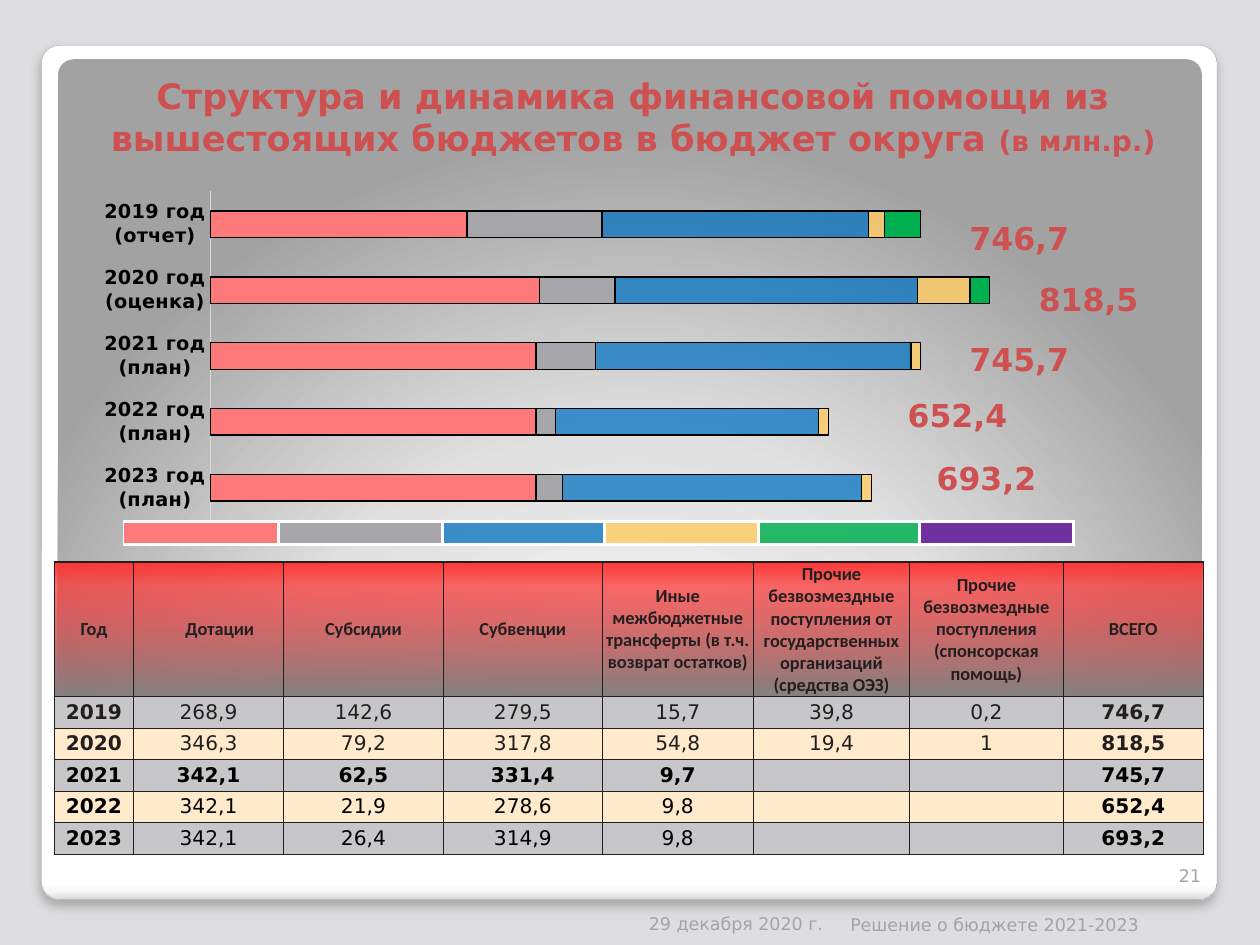
import dataclasses

import pptx
import pptx.chart.data
import pptx.dml.color
import pptx.enum.chart
import pptx.enum.shapes
import pptx.enum.text
import pptx.oxml
import pptx.oxml.ns
import pptx.util

Inches = pptx.util.Inches
Pt = pptx.util.Pt
qn = pptx.oxml.ns.qn
RGB = pptx.dml.color.RGBColor.from_string
ALIGN = pptx.enum.text.PP_ALIGN
ANCHOR = pptx.enum.text.MSO_ANCHOR
NS = pptx.oxml.ns.nsdecls("a")


@dataclasses.dataclass(frozen=True)
class Theme:
    font: str = "DejaVu Sans"
    head_font: str = "Calibri"
    page: str = "DEDEE0"
    accent: str = "CE5050"
    muted: str = "A4A4A6"
    ink: str = "231F20"
    black: str = "000000"
    white: str = "FFFFFF"
    axis: str = "D9D9D9"
    edge: str = "A4A4A4"
    bands: tuple = ("C7C7CA", "FFEACC")
    series: tuple = (("FE7979", 100), ("A5A5AA", 100), ("0070C0", 73),
                     ("FFCC66", 82), ("00B050", 100), ("7030A0", 100))
    swatch_alpha: tuple = (100, 100, 74, 83, 84, 100)
    card: tuple = ((0, "FFFFFF"), (98, "FFFFFF"), (99, "F7F7F7"), (100, "DADADA"))
    glow: tuple = ((0, "FFFFFF"), (55, "E1E1E1"), (100, "A2A2A2"))
    header: tuple = ((0, "828282"), (82, "FF3434", 72), (100, "FE3737"))
    title_pt: float = 20
    unit_pt: float = 16
    total_pt: float = 18
    axis_pt: float = 11
    small_pt: float = 10
    head_pt: float = 10.5
    body_pt: float = 11.5


T = Theme()
RADIAL = ('<a:path path="circle"><a:fillToRect l="50000" t="175000" '
          'r="50000" b="-75000"/></a:path>')


def clr(rgb, alpha=100):
    return f'<a:srgbClr val="{rgb}"><a:alpha val="{alpha * 1000}"/></a:srgbClr>'


def solid(rgb, alpha=100):
    return f"<a:solidFill {NS}>{clr(rgb, alpha)}</a:solidFill>"


def linear(angle):
    return f'<a:lin ang="{angle * 60000}" scaled="0"/>'


def gradient(stops, direction):
    gs = "".join(f'<a:gs pos="{pos * 1000}">{clr(*c)}</a:gs>' for pos, *c in stops)
    return f'<a:gradFill {NS} rotWithShape="1"><a:gsLst>{gs}</a:gsLst>{direction}</a:gradFill>'


def shadow(blur, dist, alpha):
    return pptx.oxml.parse_xml(
        f'<a:effectLst {NS}><a:outerShdw blurRad="{Pt(blur)}" dist="{Pt(dist)}" '
        f'dir="5400000" algn="t" rotWithShape="0">{clr(T.black, alpha)}'
        "</a:outerShdw></a:effectLst>")


def paint(fill, holder, xml):
    fill.solid()
    holder.replace(holder.find(qn("a:solidFill")), pptx.oxml.parse_xml(xml))


def add_run(p, text, color, glow=False, **fmt):
    r = p.add_run()
    r.text = text
    for name, value in {"name": T.font, **fmt}.items():
        setattr(r.font, name, value)
    r.font.color.rgb = RGB(color)
    if glow:
        r.font.fill._xPr.find(qn("a:solidFill")).addnext(shadow(4, 3, 50))


def add_text(slide, box, align):
    tf = slide.shapes.add_textbox(*map(Inches, box)).text_frame
    tf.word_wrap = True
    tf.vertical_anchor = ANCHOR.BOTTOM
    p = tf.paragraphs[0]
    p.alignment = align
    return p


def add_card(slide, x, y, w, h):
    panels = (((x, y, w, h), gradient(T.card, linear(90))),
              ((x + 0.13, y + 0.11, w - 0.25, h - 0.78), gradient(T.glow, RADIAL)))
    cards = []
    for box, xml in panels:
        sp = slide.shapes.add_shape(pptx.enum.shapes.MSO_SHAPE.ROUNDED_RECTANGLE,
                                    *map(Inches, box))
        sp.adjustments[0] = 0.021
        sp.shadow.inherit = False
        paint(sp.fill, sp._element.spPr, xml)
        sp.line.fill.background()
        cards.append(sp)
    outer = cards[0]
    outer.line.color.rgb = RGB(T.edge)
    outer.line.width = Pt(0.16)
    pr = outer._element.spPr
    pr.replace(pr.find(qn("a:effectLst")), shadow(6, 4, 25))


def add_title(slide, x, y, w, h):
    p = add_text(slide, (x, y, w, h), ALIGN.CENTER)
    fmt = {"color": T.accent, "glow": True, "bold": True}
    add_run(p, "Структура и динамика финансовой помощи из", size=Pt(T.title_pt), **fmt)
    p.add_line_break()
    add_run(p, "вышестоящих бюджетов в бюджет округа ", size=Pt(T.title_pt), **fmt)
    add_run(p, "(в млн.р.)", size=Pt(T.unit_pt), **fmt)


def add_footer(slide, x, y, w, h):
    parts = (("21", x + 5, y, 0.5, ALIGN.RIGHT),
             ("29 декабря 2020 г.", x, y + 0.38, w, ALIGN.RIGHT),
             ("Решение о бюджете 2021-2023", x + 2.52, y + 0.39, w, ALIGN.LEFT))
    for text, left, top, width, align in parts:
        add_run(add_text(slide, (left, top, width, h), align), text, T.muted,
                size=Pt(T.small_pt))


def add_bars(slide, x, y, w, h):
    data = pptx.chart.data.CategoryChartData()
    data.categories = ["2023 год (план)", "2022 год (план)", "2021 год (план)",
                       "2020 год (оценка)", "2019 год (отчет)"]
    rows = ((99, 99, 99, 100, 78), (8, 6, 18, 23, 41), (91, 80, 96, 92, 81),
            (3, 3, 3, 16, 5), (None, None, None, 6, 11), (None, None, None, 0, 0))
    for i, vals in enumerate(rows, 1):
        data.add_series(f"Series {i}", vals)
    chart = slide.shapes.add_chart(pptx.enum.chart.XL_CHART_TYPE.BAR_STACKED,
                                   *map(Inches, (x, y, w, h)), data).chart
    chart.has_legend = chart.has_title = False
    cat, val, plot = chart.category_axis, chart.value_axis, chart.plots[0]
    for font, size, bold in ((chart.font, T.small_pt, False),
                             (cat.tick_labels.font, T.axis_pt, True)):
        for name, value in {"name": T.font, "size": Pt(size), "bold": bold}.items():
            setattr(font, name, value)
        font.color.rgb = RGB(T.black)
    cat.major_tick_mark = pptx.enum.chart.XL_TICK_MARK.NONE
    cat.format.line.color.rgb = RGB(T.axis)
    cat.format.line.width = Pt(0.75)
    for name, value in {"minimum_scale": 0, "maximum_scale": 260,
                        "has_major_gridlines": False, "visible": False}.items():
        setattr(val, name, value)
    for name, value in {"gap_width": 150, "overlap": 100,
                        "vary_by_categories": False}.items():
        setattr(plot, name, value)
    for ser, color in zip(plot.series, T.series):
        ser.format.line.color.rgb = RGB(T.black)
        ser.format.line.width = Pt(0.75)
        paint(ser.format.fill, ser._element.find(qn("c:spPr")), solid(*color))
    area = chart._chartSpace.chart.plotArea
    for old in area.findall(qn("c:layout")):
        area.remove(old)
    frame = "".join(f'<c:{k} val="{v}"/>' for k, v in (
        ("layoutTarget", "inner"), ("xMode", "edge"), ("yMode", "edge"),
        ("x", 0.137), ("y", 0.034), ("w", 0.749), ("h", 0.692)))
    area.insert(0, pptx.oxml.parse_xml(
        f'<c:layout {pptx.oxml.ns.nsdecls("c")}><c:manualLayout>{frame}'
        "</c:manualLayout></c:layout>"))


def add_totals(slide, x, y, w, h):
    labels = (("746,7", 0.49, 0), ("818,5", 1.04, 0.48), ("745,7", 0.49, 0.96),
              ("652,4", 0, 1.4), ("693,2", 0.23, 1.9))
    for text, dx, dy in labels:
        p = add_text(slide, (x + dx, y + dy, w, h), ALIGN.CENTER)
        add_run(p, text, T.accent, glow=True, size=Pt(T.total_pt), bold=True)


def add_grid(slide, box, cols, rows):
    tbl = slide.shapes.add_table(len(rows), len(cols), *map(Inches, box)).table
    tbl.first_row = tbl.horz_banding = False
    for line, size in zip(tbl.columns, cols):
        line.width = Inches(size)
    for line, size in zip(tbl.rows, rows):
        line.height = Inches(size)
    return tbl


def style_cell(cell, xml, edge, width, sides, pt, pad):
    for side in ("left", "right", "top", "bottom"):
        setattr(cell, f"margin_{side}", Inches(pad))
    cell.vertical_anchor = ANCHOR.MIDDLE
    pr = cell._tc.get_or_add_tcPr()
    for side in sides:
        pr.append(pptx.oxml.parse_xml(
            f'<a:ln{side} {NS} w="{Pt(width)}">{solid(edge)}</a:ln{side}>'))
    paint(cell.fill, pr, xml)
    p = cell.text_frame.paragraphs[0]
    p.alignment = ALIGN.CENTER
    p._p.append(pptx.oxml.parse_xml(f'<a:endParaRPr {NS} sz="{int(pt * 100)}"/>'))
    return p


def add_swatches(slide, x, y, w, h):
    tbl = add_grid(slide, (x, y, w, h), (1.23, 1.3, 1.29, 1.22, 1.28, 1.22), (h,))
    for i, ((rgb, _), alpha) in enumerate(zip(T.series, T.swatch_alpha)):
        style_cell(tbl.cell(0, i), solid(rgb, alpha), T.white, 2.25,
                   "LRTB" if i else "RTB", 1, 0)


def add_budget(slide, x, y, w, h):
    rows = (
        ("Год", "Дотации", "Субсидии", "Субвенции",
         "Иные межбюджетные трансферты (в т.ч. возврат остатков)",
         "Прочие безвозмездные поступления от государственных организаций (средства ОЭЗ)",
         "Прочие безвозмездные поступления (спонсорская помощь)", "ВСЕГО"),
        ("2019", "268,9", "142,6", "279,5", "15,7", "39,8", "0,2", "746,7"),
        ("2020", "346,3", "79,2", "317,8", "54,8", "19,4", "1", "818,5"),
        ("2021", "342,1", "62,5", "331,4", "9,7", "", "", "745,7"),
        ("2022", "342,1", "21,9", "278,6", "9,8", "", "", "652,4"),
        ("2023", "342,1", "26,4", "314,9", "9,8", "", "", "693,2"))
    tbl = add_grid(slide, (x, y, w, h), (0.63, 1.19, 1.27, 1.26, 1.2, 1.24, 1.22, 1.11),
                   (1.03,) + (0.25,) * 5)
    for i, row in enumerate(rows):
        head = i == 0
        xml = gradient(T.header, linear(270)) if head else solid(T.bands[(i - 1) % 2])
        pt = T.head_pt if head else T.body_pt
        for j, text in enumerate(row):
            p = style_cell(tbl.cell(i, j), xml, T.ink, 0.75, "LRTB", pt, 0.01)
            if text:
                add_run(p, text, T.ink if i < 3 else T.black, size=Pt(pt),
                        name=T.head_font if head else T.font,
                        bold=i in (0, 3) or j in (0, 7))
    tbl.cell(0, 1).margin_left = Inches(0.19)


def main():
    prs = pptx.Presentation()
    prs.slide_width, prs.slide_height = Inches(10), Inches(7.5)
    slide = prs.slides.add_slide(prs.slide_layouts[6])
    slide.background.fill.solid()
    slide.background.fill.fore_color.rgb = RGB(T.page)
    add_card(slide, 0.33, 0.36, 9.33, 6.78)
    add_title(slide, 0.51, 0.52, 9.03, 0.79)
    add_footer(slide, 4.13, 6.68, 2.5, 0.4)
    add_bars(slide, 0.43, 1.39, 9.06, 3.78)
    add_swatches(slide, 0.98, 4.14, 7.53, 0.18)
    add_budget(slide, 0.43, 4.46, 9.13, 2.31)
    add_totals(slide, 7.05, 1.69, 1.1, 0.4)
    prs.save("out.pptx")


if __name__ == "__main__":
    main()
